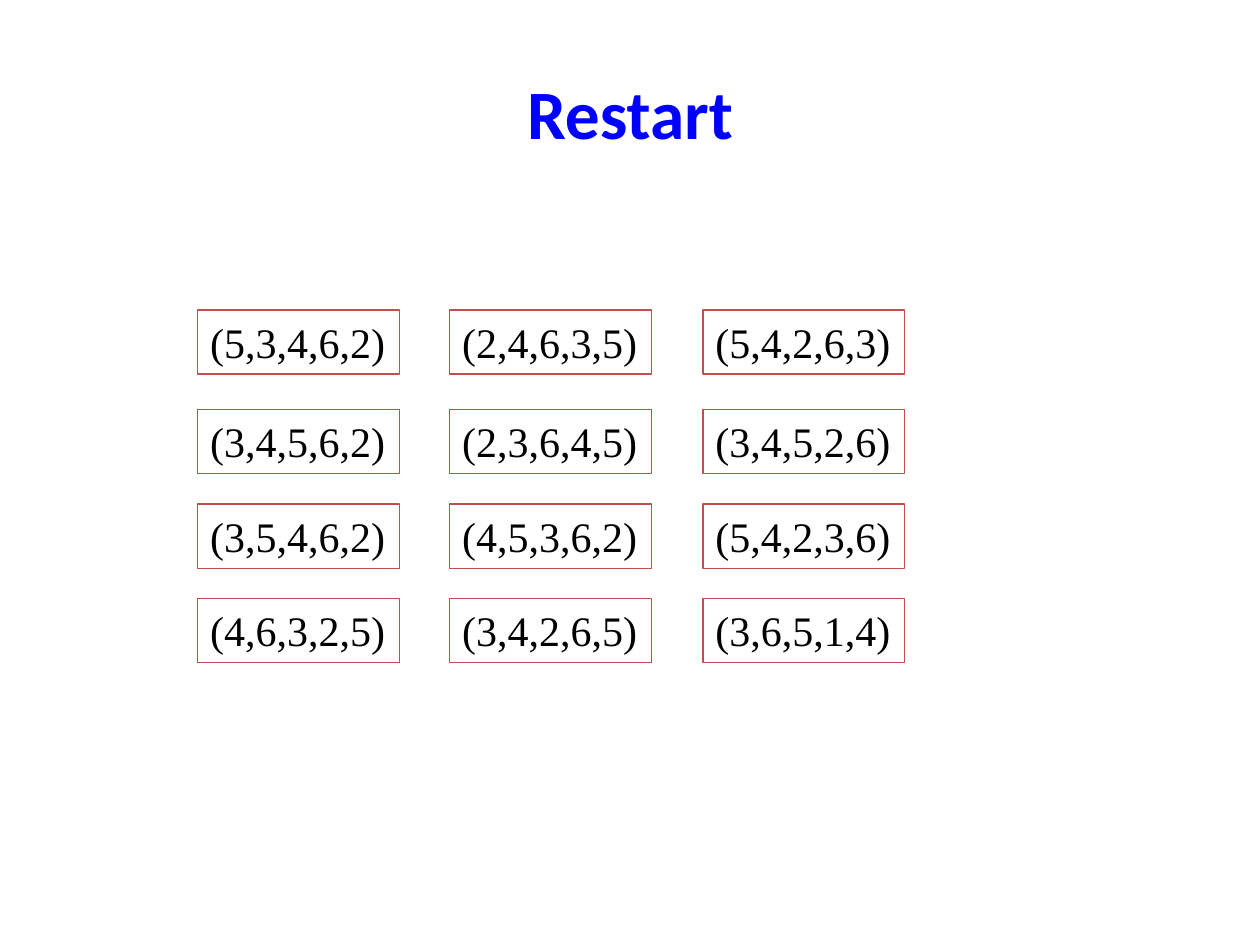
from pptx import Presentation
from pptx.dml.color import RGBColor
from pptx.enum.shapes import MSO_SHAPE
from pptx.enum.text import MSO_ANCHOR, MSO_AUTO_SIZE, PP_ALIGN
from pptx.util import Inches, Pt

# Content
TITLE = "Restart"
TUPLES = [
    ["(5,3,4,6,2)", "(2,4,6,3,5)", "(5,4,2,6,3)"],
    ["(3,4,5,6,2)", "(2,3,6,4,5)", "(3,4,5,2,6)"],
    ["(3,5,4,6,2)", "(4,5,3,6,2)", "(5,4,2,3,6)"],
    ["(4,6,3,2,5)", "(3,4,2,6,5)", "(3,6,5,1,4)"],
]

# Theme and grid
THEME = {
    "title": dict(font="Calibri", size=39.6, color="0000FF", bold=True, align=PP_ALIGN.CENTER),
    "tuple": dict(font="Times New Roman", size=24, color="000000"),
    "border": "C0504D",
}
COLUMN_LEFTS = [1.57, 3.57, 5.58]
ROW_TOPS = [2.46, 3.25, 4, 4.75]
BOX_WIDTH, BOX_HEIGHT = 1.6, 0.51


def write_text(frame, text, *, font, size, color, bold=False, align=PP_ALIGN.LEFT):
    para = frame.paragraphs[0]
    para.alignment = align
    span = para.add_run()
    span.text = text
    span.font.name = font
    span.font.size = Pt(size)
    span.font.bold = bold
    span.font.color.rgb = RGBColor.from_string(color)


def add_tuple_box(page, text, left, top):
    box = page.shapes.add_shape(MSO_SHAPE.RECTANGLE, Inches(left), Inches(top),
                                Inches(BOX_WIDTH), Inches(BOX_HEIGHT))
    box.shadow.inherit = False
    box.fill.background()
    box.line.color.rgb = RGBColor.from_string(THEME["border"])
    box.line.width = Pt(0.75)
    frame = box.text_frame
    frame.word_wrap = False
    frame.auto_size = MSO_AUTO_SIZE.SHAPE_TO_FIT_TEXT
    frame.vertical_anchor = MSO_ANCHOR.TOP
    write_text(frame, text, **THEME["tuple"])


def main():
    deck = Presentation()
    deck.slide_width, deck.slide_height = Inches(10), Inches(7.5)
    page = deck.slides.add_slide(deck.slide_layouts[5])

    # Title
    title = page.shapes.title
    title.left, title.top = Inches(0.5), Inches(0.5)
    title.width, title.height = Inches(9), Inches(0.78)
    title.text_frame.auto_size = MSO_AUTO_SIZE.NONE
    title.text_frame.vertical_anchor = MSO_ANCHOR.MIDDLE
    write_text(title.text_frame, TITLE, **THEME["title"])

    # Grid of tuples
    for top, row in zip(ROW_TOPS, TUPLES):
        for left, text in zip(COLUMN_LEFTS, row):
            add_tuple_box(page, text, left, top)

    deck.save("out.pptx")


if __name__ == "__main__":
    main()
